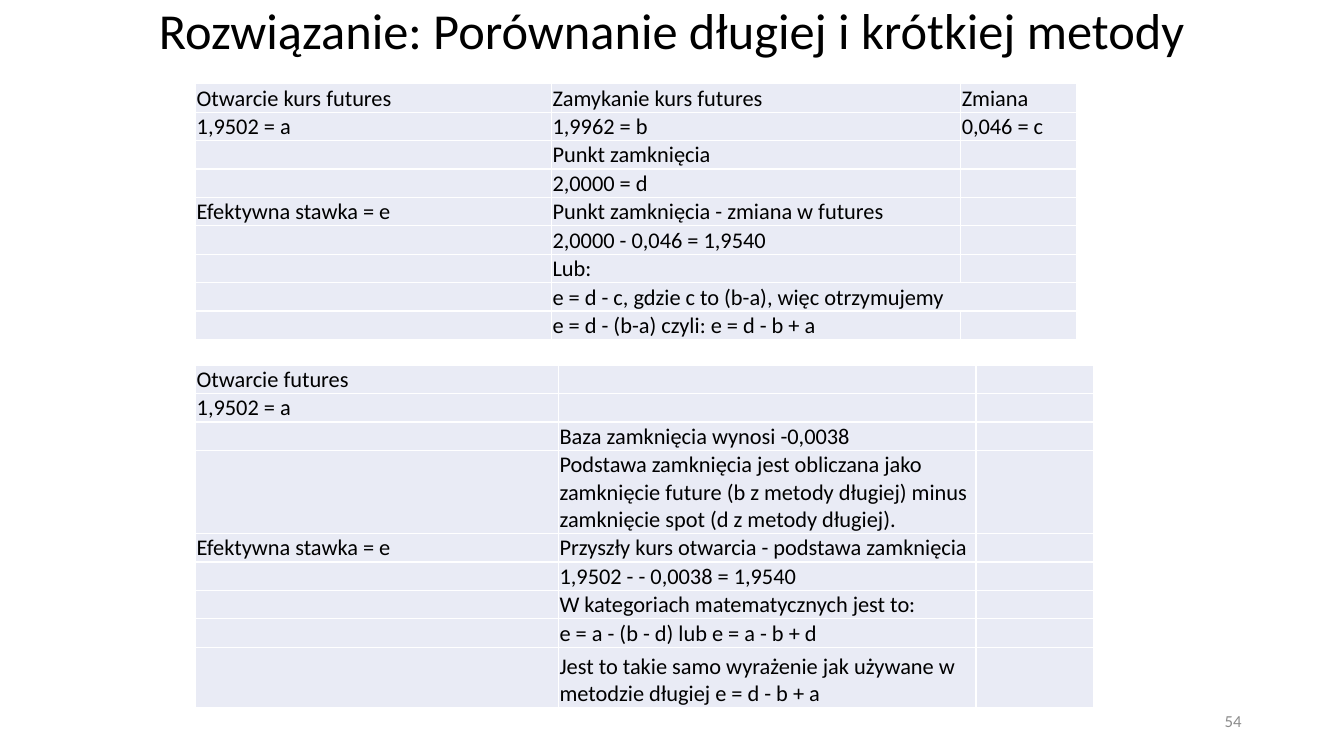
from dataclasses import dataclass

from lxml.etree import SubElement as Sub
from pptx import Presentation
from pptx.dml.color import RGBColor as Rgb
from pptx.enum.text import MSO_ANCHOR as Anchor, MSO_AUTO_SIZE as Fit, PP_ALIGN as Align
from pptx.oxml.ns import qn
from pptx.slide import Slide
from pptx.table import _Cell as Cell
from pptx.text.text import _Paragraph as Para
from pptx.util import Pt

HUES = {"ink": "000000", "line": "FFFFFF", "cell": "E9EBF5", "page": "8C8C8C"}
FACE = "Calibri"
SIZE = 16
ROW = 20
LEFT = 139.8


@dataclass
class Grid:
    top: float
    cols: list[float]
    rows: list[tuple[str, ...]]
    tall: dict[int, float]
    wide: tuple[int, ...] = ()


LONG = Grid(
    top=59.8,
    cols=[254.2, 292.3, 82.8],
    rows=[
        ("Otwarcie kurs futures", "Zamykanie kurs futures", "Zmiana"),
        ("1,9502 = a", "1,9962 = b", "0,046 = c"),
        ("", "Punkt zamknięcia", ""),
        ("", "2,0000 = d", ""),
        ("Efektywna stawka = e", "Punkt zamknięcia - zmiana w futures", ""),
        ("", "2,0000 - 0,046 = 1,9540", ""),
        ("", "Lub:", ""),
        ("", "e = d - c, gdzie c to (b-a), więc otrzymujemy", ""),
        ("", "e = d - (b-a) czyli: e = d - b + a", ""),
    ],
    tall={},
    wide=(7,),
)

SHORT = Grid(
    top=260.8,
    cols=[259.2, 298.1, 84.2],
    rows=[
        ("Otwarcie futures", "", ""),
        ("1,9502 = a", "", ""),
        ("", "Baza zamknięcia wynosi -0,0038", ""),
        ("", "Podstawa zamknięcia jest obliczana jako zamknięcie future "
             "(b z metody długiej) minus zamknięcie spot (d z metody długiej).", ""),
        ("Efektywna stawka = e", "Przyszły kurs otwarcia - podstawa zamknięcia", ""),
        ("", "1,9502 - - 0,0038 = 1,9540", ""),
        ("", "W kategoriach matematycznych jest to:", ""),
        ("", "e = a - (b - d) lub e = a - b + d", ""),
        ("", "Jest to takie samo wyrażenie jak używane w metodzie długiej "
             "e = d - b + a", ""),
    ],
    tall={3: 58.3, 8: 43.2},
)


def write(para: Para, text: str, size: float, hue: str) -> None:
    run = para.add_run()
    run.text = text
    run.font.size = Pt(size)
    run.font.name = FACE
    run.font.color.rgb = Rgb.from_string(HUES[hue])


def edge(cell: Cell) -> None:
    """Draw the four borders; they must come before the cell fill."""
    props = cell._tc.get_or_add_tcPr()
    for side in ("lnL", "lnR", "lnT", "lnB"):
        line = Sub(props, qn(f"a:{side}"), w=str(Pt(1)))
        Sub(Sub(line, qn("a:solidFill")), qn("a:srgbClr"), val=HUES["line"])


def dress(cell: Cell, text: str) -> None:
    edge(cell)
    cell.fill.solid()
    cell.fill.fore_color.rgb = Rgb.from_string(HUES["cell"])
    cell.margin_left = cell.margin_right = cell.margin_top = Pt(0.72)
    cell.margin_bottom = Pt(0)
    cell.vertical_anchor = Anchor.BOTTOM
    para = cell.text_frame.paragraphs[0]
    if text:
        write(para, text, SIZE, "ink")
    else:
        # Keeps an empty cell as low as its row
        Sub(para._p, qn("a:endParaRPr"), sz=str(SIZE * 100))


def draw(slide: Slide, grid: Grid) -> None:
    highs = [grid.tall.get(i, ROW) for i in range(len(grid.rows))]
    frame = slide.shapes.add_table(
        len(highs), len(grid.cols), Pt(LEFT), Pt(grid.top),
        Pt(sum(grid.cols)), Pt(sum(highs)))
    table = frame.table
    table.first_row = table.horz_banding = False
    for col, width in zip(table.columns, grid.cols):
        col.width = Pt(width)
    for i, (row, high) in enumerate(zip(table.rows, highs)):
        row.height = Pt(high)
        for cell, text in zip(row.cells, grid.rows[i]):
            dress(cell, text)
    for i in grid.wide:
        table.cell(i, 1).merge(table.cell(i, 2))


def main() -> None:
    deck = Presentation()
    deck.slide_width, deck.slide_height = Pt(960), Pt(540)
    slide = deck.slides.add_slide(deck.slide_layouts[5])

    # Title
    title = slide.shapes.title
    title.left, title.top, title.width, title.height = Pt(0), Pt(0), Pt(960), Pt(47.5)
    frame = title.text_frame
    frame.auto_size = Fit.NONE
    frame.vertical_anchor = Anchor.MIDDLE
    para = frame.paragraphs[0]
    para.alignment = Align.CENTER
    para.line_spacing = 0.9
    write(para, "Rozwiązanie: Porównanie długiej i krótkiej metody", 36, "ink")

    # Long and short method
    for grid in (LONG, SHORT):
        draw(slide, grid)

    # Page number
    box = slide.shapes.add_textbox(Pt(678), Pt(500.5), Pt(216), Pt(28.8))
    frame = box.text_frame
    frame.word_wrap = True
    frame.vertical_anchor = Anchor.MIDDLE
    para = frame.paragraphs[0]
    para.alignment = Align.RIGHT
    write(para, "54", 12, "page")

    deck.save("out.pptx")


if __name__ == "__main__":
    main()
